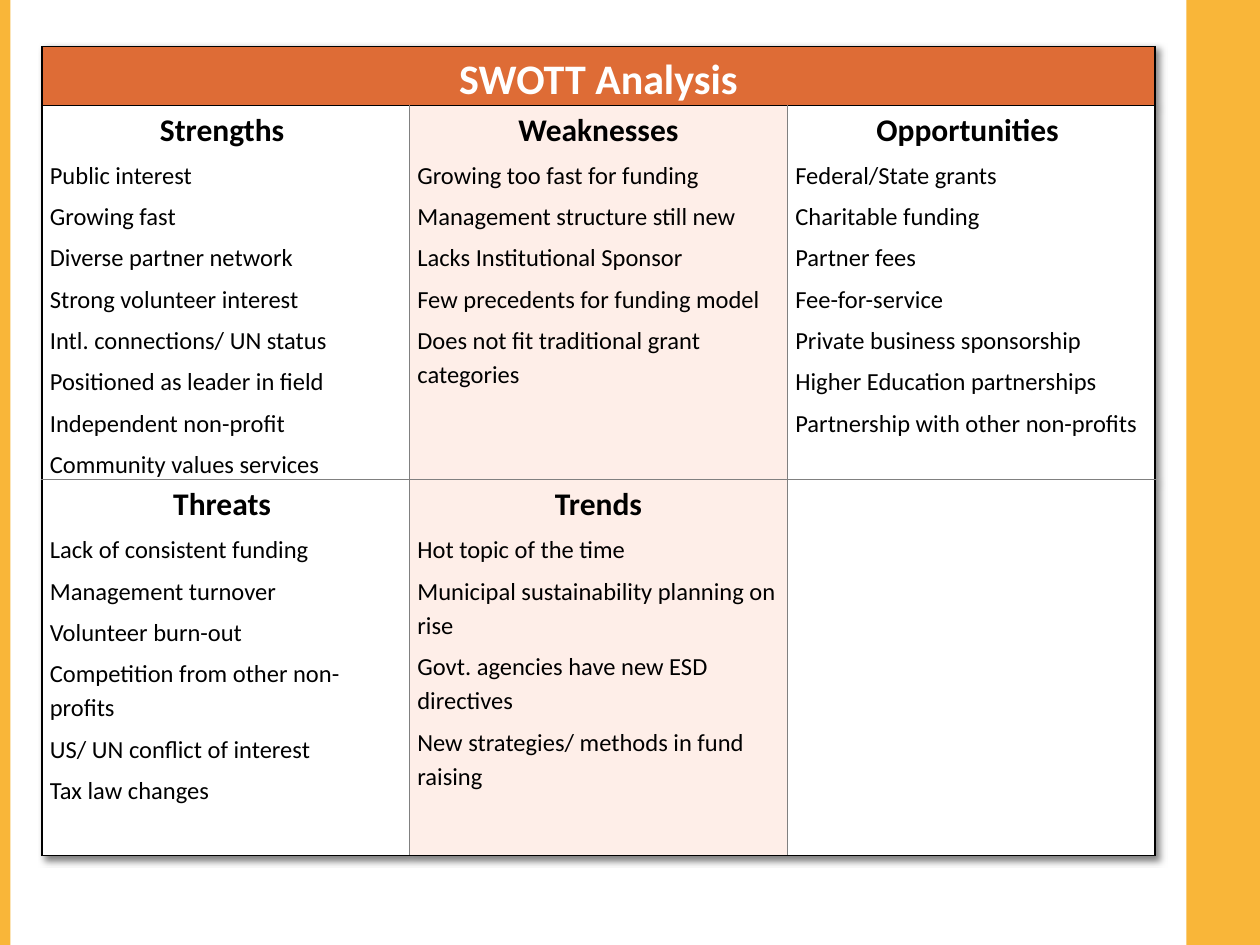
from lxml import etree
from pptx import Presentation
from pptx import util as u
from pptx.dml.color import RGBColor
from pptx.enum import shapes, text
from pptx.oxml import ns

BLACK = RGBColor(0x00, 0x00, 0x00)
WHITE = RGBColor(0xFF, 0xFF, 0xFF)
GREY = RGBColor(0x80, 0x80, 0x80)
GOLD = RGBColor(0xF9, 0xB6, 0x39)
ORANGE = RGBColor(0xDE, 0x6C, 0x36)
BLUSH = RGBColor(0xFE, 0xEE, 0xE8)

SLIDE_W, SLIDE_H = 720, 540
BANDS = [(678, 42), (0, 6)]  # left, width
TABLE_LEFT, TABLE_TOP = 24, 26.6
COLUMN_WIDTHS = [210, 216, 210]
ROW_HEIGHTS = [33.6, 213.7, 214.6]
COLUMN_FILLS = [WHITE, BLUSH, WHITE]

TITLE = "SWOTT Analysis"
QUADRANTS = [
    [
        ("Strengths ", ["Public interest", "Growing fast", "Diverse partner network",
                        "Strong volunteer interest", "Intl. connections/ UN status",
                        "Positioned as leader in field", "Independent non-profit",
                        "Community values services"]),
        ("Weaknesses", ["Growing too fast for funding", "Management structure still new",
                        "Lacks Institutional Sponsor", "Few precedents for funding model",
                        "Does not fit traditional grant categories"]),
        ("Opportunities ", ["Federal/State grants", "Charitable funding", "Partner fees",
                            "Fee-for-service", "Private business sponsorship",
                            "Higher Education partnerships",
                            "Partnership with other non-profits"]),
    ],
    [
        ("Threats ", ["Lack of consistent funding", "Management turnover",
                      "Volunteer burn-out", "Competition from other non-profits",
                      "US/ UN conflict of interest", "Tax law changes"]),
        ("Trends", ["Hot topic of the time", "Municipal sustainability planning on rise",
                    "Govt. agencies have new ESD directives",
                    "New strategies/ methods in fund raising"]),
        None,
    ],
]

CELL_FORMAT = {"margin_left": u.Pt(4.5), "margin_right": u.Pt(4.5),
               "margin_top": 0, "margin_bottom": 0}
PARA_FORMAT = {"line_spacing": 1.15, "space_after": u.Pt(4)}
TITLE_FONT = {"name": "Calibri", "size": u.Pt(24), "bold": True}
HEADING_FONT = {"name": "Calibri", "size": u.Pt(18), "bold": True}
ITEM_FONT = {"name": "Calibri", "size": u.Pt(14), "bold": False}


def apply(target, values):
    for name, value in values.items():
        setattr(target, name, value)


def add_element(parent, tag, **attributes):
    return etree.SubElement(parent, ns.qn(tag), attributes)


def write_lines(cell, lines):
    """Fill a cell with (wording, font, colour, alignment) lines."""
    frame = cell.text_frame
    for index, (wording, font, colour, alignment) in enumerate(lines):
        para = frame.add_paragraph() if index else frame.paragraphs[0]
        apply(para, {**PARA_FORMAT, "alignment": alignment})
        span = para.add_run()
        span.text = wording
        apply(span.font, font)
        span.font.color.rgb = colour


def style_cell(cell, fill, row, column):
    """Black lines around the table and the title row, thin grey ones inside."""
    apply(cell, CELL_FORMAT)
    outer = {"L": column == 0 or row == 0, "R": column == 2 or row == 0,
             "T": row < 2, "B": row != 1}
    properties = cell._tc.get_or_add_tcPr()
    for side, is_outer in outer.items():
        width, colour = (1, BLACK) if is_outer else (0.5, GREY)
        line = add_element(properties, f"a:ln{side}", w=str(u.Pt(width)))
        add_element(add_element(line, "a:solidFill"), "a:srgbClr", val=str(colour))
    # Schema order of the borders is left, right, top, bottom, then the fill
    cell.fill.solid()
    cell.fill.fore_color.rgb = fill


def add_table_shadow(table):
    effects = add_element(table._tbl.tblPr, "a:effectLst")
    shadow = add_element(effects, "a:outerShdw", blurRad=str(u.Pt(4)),
                         dist=str(u.Pt(3)), dir="2700000", algn="tl", rotWithShape="0")
    colour = add_element(shadow, "a:srgbClr", val=str(BLACK))
    add_element(colour, "a:alpha", val="50000")
    # The effect list comes before the table style
    table._tbl.tblPr.insert(0, effects)


def add_bands(page):
    for left, width in BANDS:
        band = page.shapes.add_shape(shapes.MSO_SHAPE.RECTANGLE, u.Pt(left), 0,
                                     u.Pt(width), u.Pt(SLIDE_H))
        band.shadow.inherit = False
        band.fill.solid()
        band.fill.fore_color.rgb = GOLD
        band.line.fill.background()


def add_swott_table(page):
    table = page.shapes.add_table(
        len(ROW_HEIGHTS), len(COLUMN_WIDTHS), u.Pt(TABLE_LEFT), u.Pt(TABLE_TOP),
        u.Pt(sum(COLUMN_WIDTHS)), u.Pt(sum(ROW_HEIGHTS))).table
    apply(table, {"first_row": False, "horz_banding": False})
    for column, width in zip(table.columns, COLUMN_WIDTHS):
        column.width = u.Pt(width)
    for row, height in zip(table.rows, ROW_HEIGHTS):
        row.height = u.Pt(height)

    centre, left = text.PP_ALIGN.CENTER, text.PP_ALIGN.LEFT
    table.cell(0, 0).merge(table.cell(0, len(COLUMN_WIDTHS) - 1))
    write_lines(table.cell(0, 0), [(TITLE, TITLE_FONT, WHITE, centre)])
    for row in range(len(ROW_HEIGHTS)):
        for column, fill in enumerate(COLUMN_FILLS):
            cell = table.cell(row, column)
            style_cell(cell, fill if row else ORANGE, row, column)
            quadrant = QUADRANTS[row - 1][column] if row else None
            if quadrant:
                heading, items = quadrant
                write_lines(cell, [(heading, HEADING_FONT, BLACK, centre)]
                            + [(item, ITEM_FONT, BLACK, left) for item in items])
    add_table_shadow(table)


def main():
    deck = Presentation()
    deck.slide_width, deck.slide_height = u.Pt(SLIDE_W), u.Pt(SLIDE_H)
    page = deck.slides.add_slide(deck.slide_layouts[6])
    add_bands(page)
    add_swott_table(page)
    deck.save("out.pptx")


if __name__ == "__main__":
    main()
